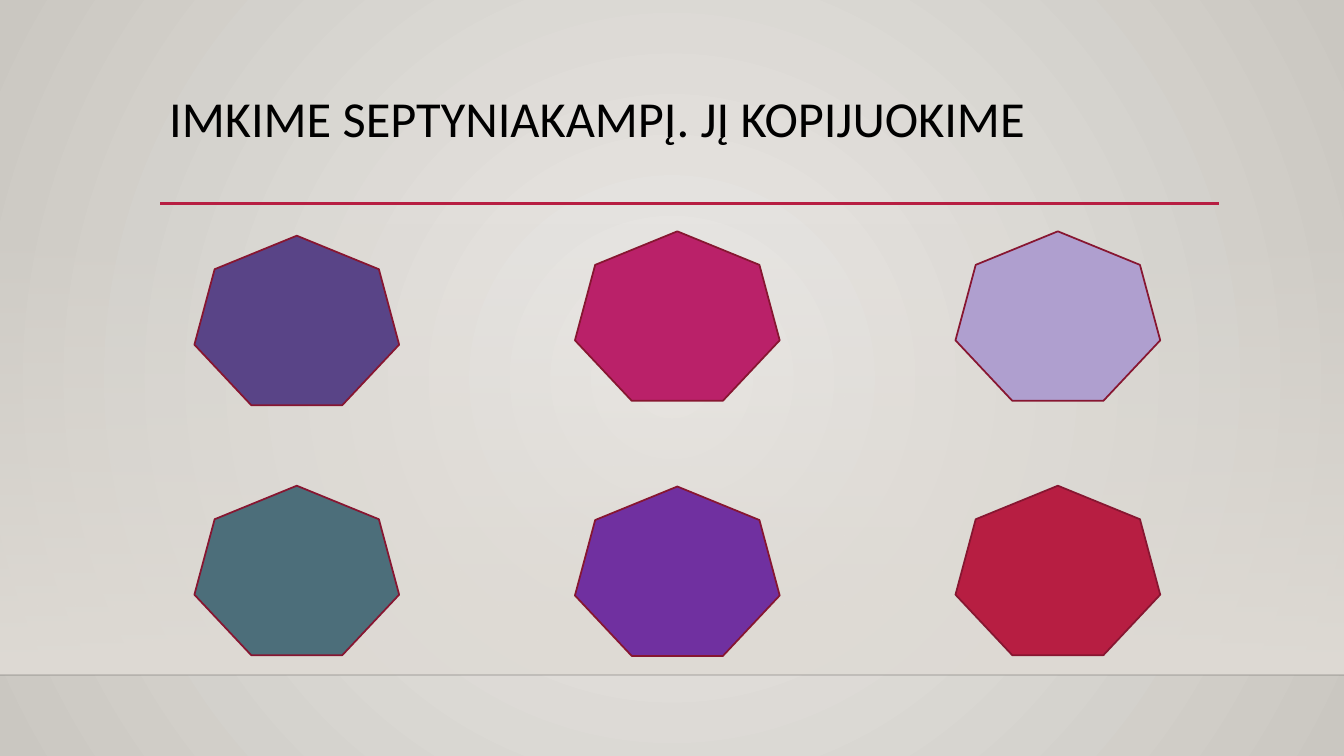
from lxml.etree import SubElement
from pptx import Presentation
from pptx.dml.color import RGBColor
from pptx.enum.shapes import MSO_CONNECTOR as Link, MSO_SHAPE as Form
from pptx.enum.text import MSO_ANCHOR as Anchor, PP_ALIGN as Align
from pptx.oxml.ns import qn
from pptx.util import Cm, Pt

WIDTH, HEIGHT = 33.87, 19.05
FLOOR = 17.01


def paint(color, code):
    color.rgb = RGBColor.from_string(code)


def fade(root, alpha):
    SubElement(root.find(".//" + qn("a:srgbClr")), qn("a:alpha"), val=str(alpha * 1000))


class Board:
    font = "Calibri"
    ink = "000000"
    edge = "871631"
    red = "B71E42"

    def __init__(self, deck):
        self.slide = deck.slides.add_slide(deck.slide_layouts[5])
        self.shapes = self.slide.shapes

    def blend(self, fill, codes):
        fill.gradient()
        for stop, code in zip(fill.gradient_stops, codes):
            paint(stop.color, code)

    def back(self, inner, outer):
        self.blend(self.slide.background.fill, (inner, outer))
        grad = self.slide.element.find(".//" + qn("a:gradFill"))
        grad.remove(grad.find(qn("a:lin")))
        ring = SubElement(grad, qn("a:path"), path="circle")
        SubElement(ring, qn("a:fillToRect"), l="50000", t="50000", r="50000", b="50000")

    def shape(self, form, x, y, w, h):
        item = self.shapes.add_shape(form, Cm(x), Cm(y), Cm(w), Cm(h))
        item.shadow.inherit = False
        return item

    def wall(self, top, code):
        item = self.shape(Form.RECTANGLE, 0, top, WIDTH, FLOOR - top)
        item.line.fill.background()
        self.blend(item.fill, (code, code))
        item.fill.gradient_angle = 270
        fade(item.element.spPr, 0)

    def rule(self, left, right, y, code, size, alpha=100):
        item = self.shapes.add_connector(Link.STRAIGHT, Cm(left), Cm(y), Cm(right), Cm(y))
        paint(item.line.color, code)
        item.line.width = Pt(size)
        if alpha < 100:
            fade(item.element.spPr, alpha)
        SubElement(item.element.spPr, qn("a:effectLst"))

    def title(self, text, x, y, w, h):
        item = self.shapes.title
        item.left, item.top, item.width, item.height = Cm(x), Cm(y), Cm(w), Cm(h)
        frame = item.text_frame
        frame.text = text
        frame.word_wrap = True
        frame.vertical_anchor = Anchor.TOP
        line = frame.paragraphs[0]
        line.alignment = Align.LEFT
        line.line_spacing = 0.9
        font = line.runs[0].font
        font.name, font.size = self.font, Pt(36)
        paint(font.color, self.ink)

    def seven(self, x, y, code):
        item = self.shape(Form.HEPTAGON, x, y, 5.16, 4.27)
        item.fill.solid()
        paint(item.fill.fore_color, code)
        paint(item.line.color, self.edge)
        item.line.width = Pt(1.25)


def main():
    deck = Presentation()
    deck.slide_width, deck.slide_height = Cm(WIDTH), Cm(HEIGHT)
    board = Board(deck)
    board.back("ECEAE7", "CAC7C1")
    board.wall(5.61, "DFDBD5")
    board.rule(0, WIDTH, FLOOR, "000001", 1, 20)
    board.rule(4.04, 30.73, 5.13, board.red, 2.5)
    board.title("IMKIME SEPTYNIAKAMPĮ. JĮ KOPIJUOKIME", 4.01, 2.24, 26.67, 2.95)
    rows = (
        ((5.94, "594487"), (5.83, "BA2169"), (5.83, "AF9FCF")),
        ((12.24, "4C6E7A"), (12.26, "7030A0"), (12.24, board.red)),
    )
    for row in rows:
        for col, (y, code) in enumerate(row):
            board.seven(4.9 + 9.59 * col, y, code)
    deck.save("out.pptx")


if __name__ == "__main__":
    main()
